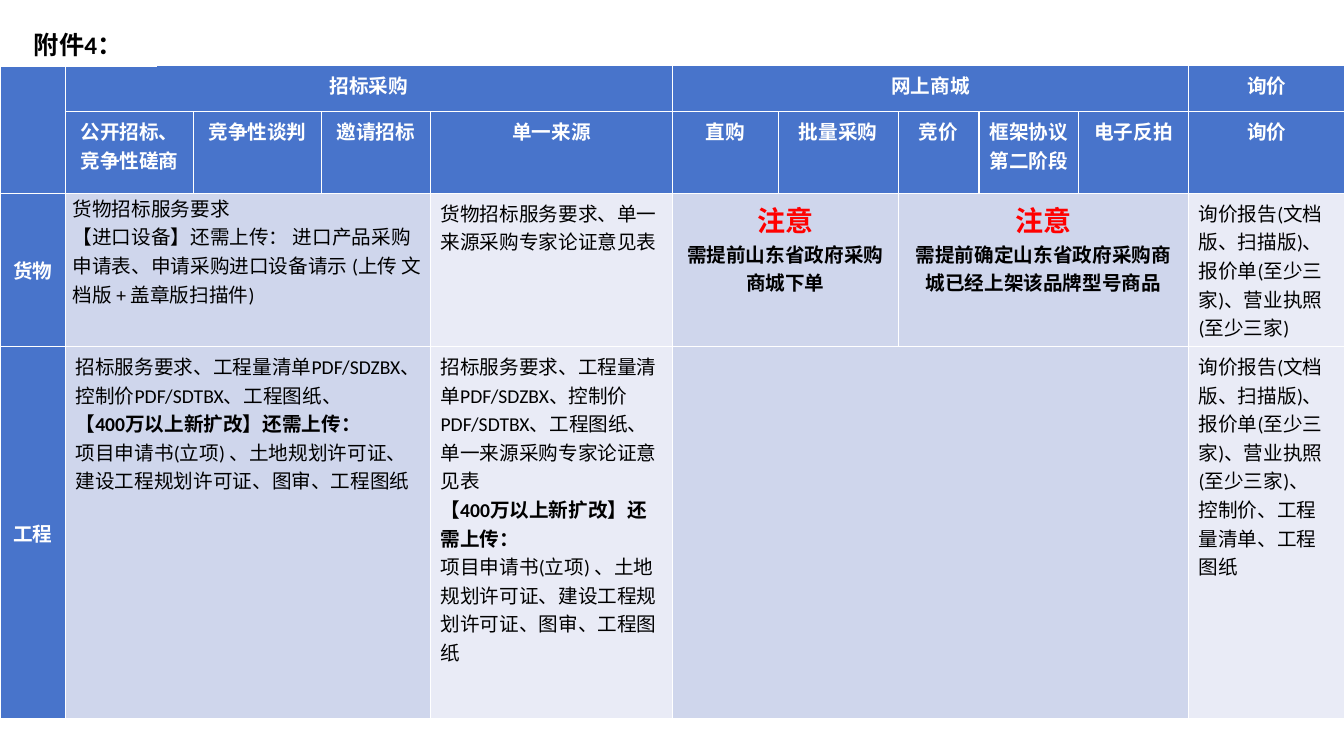
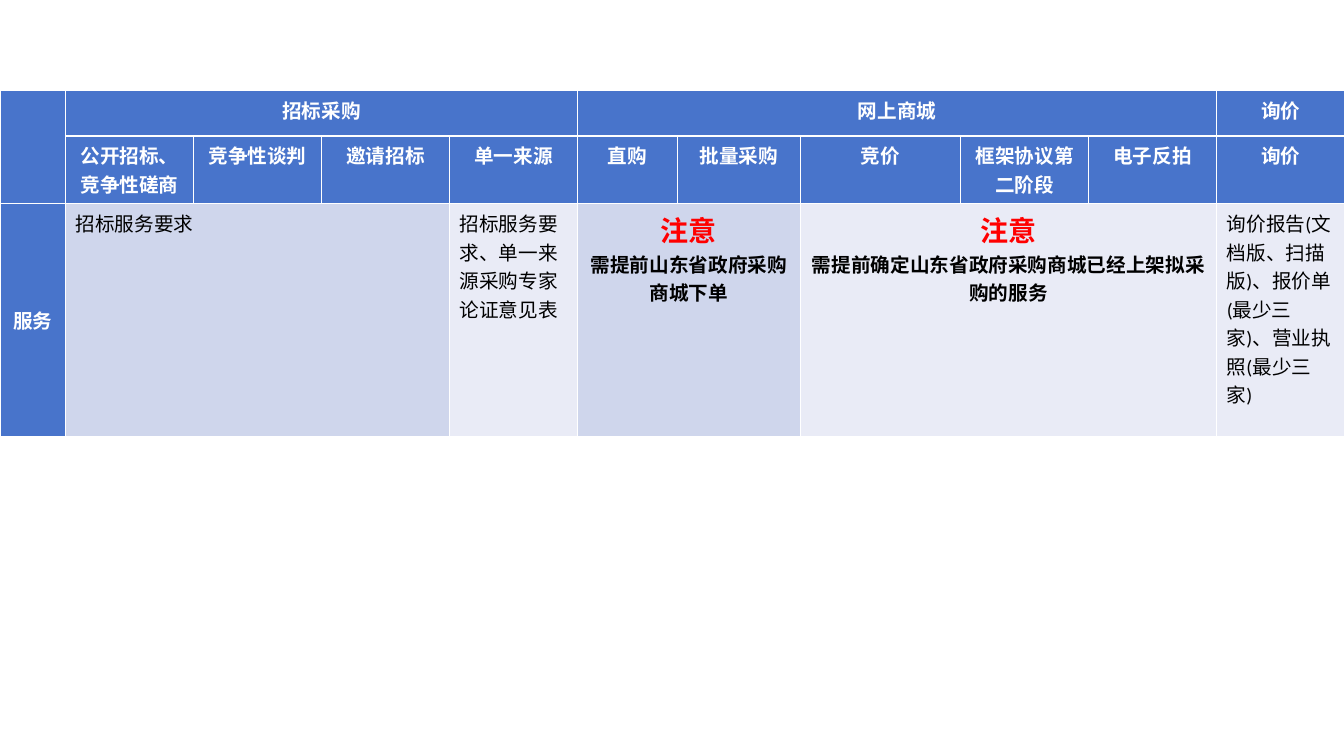
"""Build the procurement attachment slides."""
from dataclasses import dataclass, field
from itertools import product

from lxml.etree import SubElement
from pptx import Presentation
from pptx.dml.color import RGBColor
from pptx.enum.text import MSO_ANCHOR, PP_ALIGN
from pptx.oxml.ns import qn
from pptx.util import Inches, Pt


@dataclass(frozen=True)
class Theme:
    font: str = "Calibri"
    blue: str = "4874CB"
    tint: str = "CFD6EC"
    pale: str = "E9EBF6"
    white: str = "FFFFFF"
    black: str = "000000"
    red: str = "FF0000"
    body: int = 14
    title: int = 18
    alert: int = 20
    border: int = 1


@dataclass(frozen=True)
class Line:
    text: str
    color: str = Theme.black
    size: int = Theme.body
    bold: bool = False
    align: PP_ALIGN = PP_ALIGN.LEFT


@dataclass(frozen=True)
class Cell:
    lines: tuple = ()
    fill: str = Theme.blue
    cols: int = 1
    rows: int = 1
    fmt: dict = field(default_factory=dict)


T = Theme()
MIDDLE = {"vertical_anchor": MSO_ANCHOR.MIDDLE}
TIGHT = {
    "margin_left": Inches(0.07), "margin_right": Inches(0.07),
    "margin_top": 0, "margin_bottom": 0,
}
TYPES = ("公开招标、竞争性磋商", "竞争性谈判", "邀请招标", "单一来源", "直购",
         "批量采购", "竞价", "框架协议第二阶段", "电子反拍", "询价")
LARGE_WORKS = (
    Line("【400万以上新扩改】还需上传：", bold=True),
    Line("项目申请书(立项) 、土地规划许可证、建设工程规划许可证、图审、工程图纸"),
)
WORKS = "招标服务要求、工程量清单PDF/SDZBX、控制价PDF/SDTBX、工程图纸、"
EXPERT = "单一来源采购专家论证意见表"
ORDER_FIRST = "需提前山东省政府采购商城下单"


def set_attrs(obj, fmt):
    """Set each named attribute of an object."""
    for name, value in fmt.items():
        setattr(obj, name, value)


def center(text, color=T.black, size=T.body):
    """Return a bold centred line."""
    return Line(text, color, size, True, PP_ALIGN.CENTER)


def head(text, **fmt):
    """Return a blue header cell."""
    return Cell((center(text, T.white),), **fmt)


def body(*lines, **fmt):
    """Return a pale or tinted cell of plain text."""
    lines = tuple(Line(x) if isinstance(x, str) else x for x in lines)
    return Cell(lines, **{"fill": T.pale, **fmt})


def notice(text, cols, fill=T.tint):
    """Return a cell with a red alert above a bold line."""
    return Cell((center("注意", T.red, T.alert), center(text)), fill, cols)


def quotes(least, tail=""):
    """Return the list of papers for a price inquiry."""
    return f"询价报告(文档版、扫描版)、报价单({least}三家)、营业执照({least}三家){tail}"


def header_rows():
    """Return the two header rows that both tables share."""
    groups = [Cell(rows=2), head("招标采购", cols=4),
              head("网上商城", cols=5), head("询价")]
    return [groups, [None] + [head(x) for x in TYPES]]


def paint(cell, fill):
    """Give a cell its borders and fill."""
    tc_pr = cell._tc.get_or_add_tcPr()
    for side in ("lnL", "lnR", "lnT", "lnB"):
        ln = SubElement(tc_pr, qn(f"a:{side}"), w=str(Pt(T.border)))
        SubElement(SubElement(ln, qn("a:solidFill")), qn("a:srgbClr"), val=T.white)
    cell.fill.solid()
    cell.fill.fore_color.rgb = RGBColor.from_string(fill)


def write(tf, lines):
    """Write styled paragraphs into a text frame."""
    for i, line in enumerate(lines):
        p = tf.add_paragraph() if i else tf.paragraphs[0]
        p.alignment = line.align
        r = p.add_run()
        r.text = line.text
        set_attrs(r.font, {"name": T.font, "size": Pt(line.size), "bold": line.bold})
        r.font.color.rgb = RGBColor.from_string(line.color)


def place(tbl, row, col, spec):
    """Fill one cell and the cells it spans."""
    rows, cols = range(row, row + spec.rows), range(col, col + spec.cols)
    for i, j in product(rows, cols):
        paint(tbl.cell(i, j), spec.fill)
    cell = tbl.cell(row, col)
    if spec.rows * spec.cols > 1:
        cell.merge(tbl.cell(rows[-1], cols[-1]))
    set_attrs(cell, spec.fmt)
    write(cell.text_frame, spec.lines)


def add_grid(s, top, widths, heights, grid):
    """Add a table at the left edge of the slide."""
    tbl = s.shapes.add_table(
        len(heights), len(widths), 0, Inches(top),
        Inches(sum(widths)), Inches(sum(heights))).table
    set_attrs(tbl, {"first_row": False, "horz_banding": False})
    for column, width in zip(tbl.columns, widths):
        column.width = Inches(width)
    for row, height in zip(tbl.rows, heights):
        row.height = Inches(height)
    for i, cells in enumerate(grid):
        col = 0
        for spec in cells:
            if spec:
                place(tbl, i, col, spec)
            col += spec.cols if spec else 1


def goods_and_works(s):
    """Build the slide on goods and works."""
    goods = [
        head("货物", fmt=MIDDLE),
        body("货物招标服务要求",
             "【进口设备】还需上传： 进口产品采购申请表、申请采购进口设备请示 "
             "(上传 文档版 + 盖章版扫描件)", fill=T.tint, cols=3, fmt=TIGHT),
        body("货物招标服务要求、" + EXPERT),
        notice(ORDER_FIRST, 2),
        notice("需提前确定山东省政府采购商城已经上架该品牌型号商品", 3),
        body(quotes("至少")),
    ]
    works = [
        head("工程", fmt=MIDDLE),
        body(WORKS, *LARGE_WORKS, fill=T.tint, cols=3),
        body(WORKS + EXPERT, *LARGE_WORKS),
        body(fill=T.tint, cols=5),
        body(quotes("至少", "、"), "控制价、工程量清单、工程图纸"),
    ]
    widths = [0.65, 1.27, 1.27, 1.08, 2.4, 1.05, 1.19, 0.8, 0.99, 1.09, 1.55]
    add_grid(s, 0.65, widths, [0.46, 0.81, 1.52, 3.69],
             header_rows() + [goods, works])
    label = Cell((center("附件4：", size=T.title),), T.white, fmt=MIDDLE)
    add_grid(s, 0.2, [1.55], [0.45], [[label]])


def services(s):
    """Build the slide on services."""
    row = [
        head("服务", fmt=MIDDLE),
        body("招标服务要求", fill=T.tint, cols=3),
        body("招标服务要求、" + EXPERT),
        notice(ORDER_FIRST, 2),
        notice("需提前确定山东省政府采购商城已经上架拟采购的服务", 3, T.pale),
        body(quotes("最少")),
    ]
    widths = [0.65] + [1.27] * 4 + [0.99, 1.22, 1.59] + [1.27] * 3
    add_grid(s, 0.9, widths, [0.45, 0.67, 2.31], header_rows() + [row])


def main():
    """Build and save the presentation."""
    prs = Presentation()
    set_attrs(prs, {"slide_width": Inches(13.33), "slide_height": Inches(7.5)})
    for build in (goods_and_works, services):
        build(prs.slides.add_slide(prs.slide_layouts[6]))
    prs.save("out.pptx")


if __name__ == "__main__":
    main()
